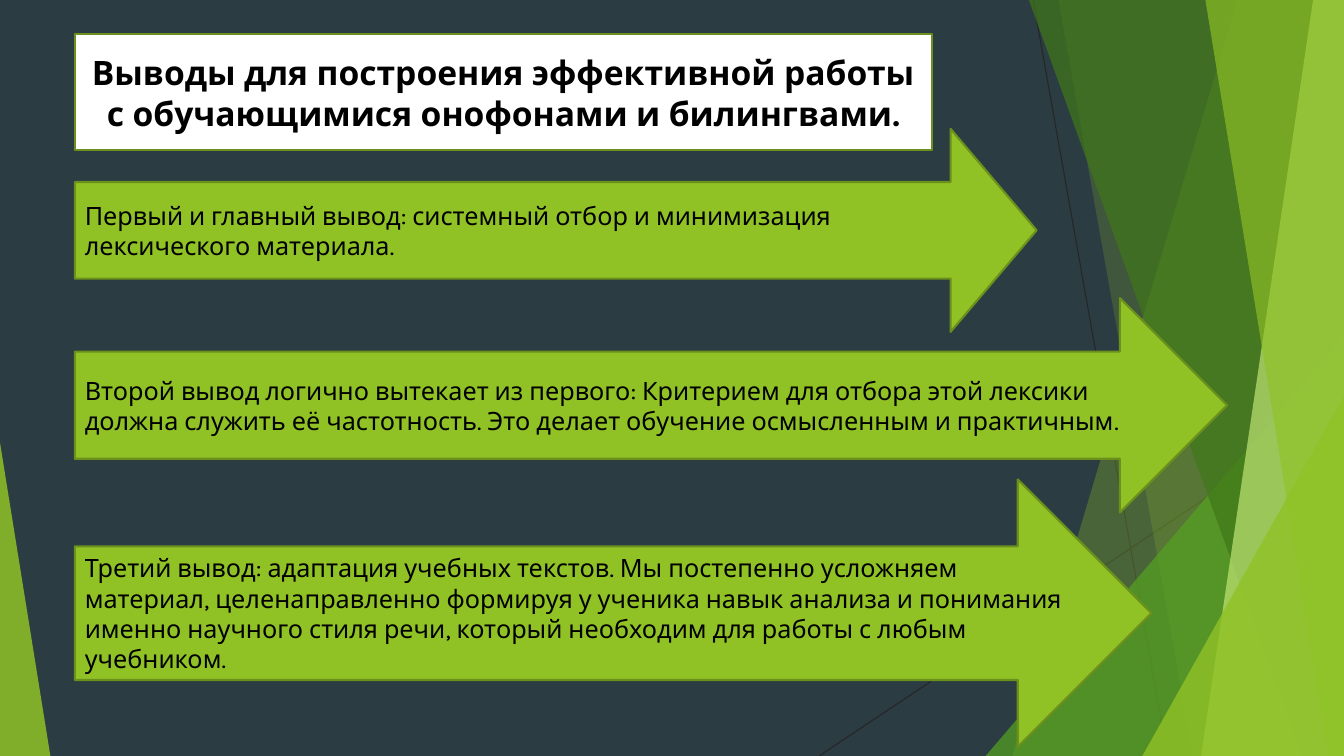
from lxml import etree
from pptx import Presentation
from pptx.dml.color import RGBColor
from pptx.enum import shapes as shp, text as txt
from pptx.oxml import parse_xml
from pptx.oxml.ns import nsdecls, qn
from pptx.util import Pt

WIDTH, HEIGHT = 960, 540
FONT = "Karla"
GREEN, OUTLINE, BLACK = "90C226", "6B901C", "000000"
MARGIN = 53.5

# colour, opacity in percent, corners
FACETS = [
    (GREEN, 30, [(884, 0), (WIDTH, 0), (WIDTH, HEIGHT), (723, HEIGHT)]),
    (GREEN, 20, [(756, 0), (WIDTH, 0), (WIDTH, HEIGHT), (852, HEIGHT)]),
    ("54A021", 72, [(703.5, HEIGHT), (WIDTH, 240), (WIDTH, HEIGHT)]),
    ("3F7819", 70, [(735, 0), (WIDTH, 0), (WIDTH, HEIGHT), (930, HEIGHT)]),
    ("C0E474", 70, [(938, 0), (WIDTH, 0), (WIDTH, HEIGHT), (858, HEIGHT)]),
    (GREEN, 65, [(861, 0), (WIDTH, 0), (WIDTH, HEIGHT), (949, HEIGHT)]),
    (GREEN, 80, [(816.5, HEIGHT), (WIDTH, 283), (WIDTH, HEIGHT)]),
    (GREEN, 85, [(0, 316), (35.5, HEIGHT), (0, HEIGHT)]),
]
RAYS = [(738, 0, 834, HEIGHT), (WIDTH, 290, 585, HEIGHT)]

TITLE = "Выводы для построения эффективной работы с обучающимися онофонами и билингвами."
# top, width, height, (shaft share, head share), wording; from back to front
CONCLUSIONS = [
    (92, 687, 145, (0.476, 0.424),
     "Первый и главный вывод: системный отбор и минимизация лексического материала."),
    (342.5, 769, 191, (0.5, 0.5),
     "Третий вывод: адаптация учебных текстов. Мы постепенно усложняем материал, "
     "целенаправленно формируя у ученика навык анализа и понимания именно научного "
     "стиля речи, который необходим для работы с любым учебником."),
    (213, 823, 153, (0.5, 0.5),
     "Второй вывод логично вытекает из первого: Критерием для отбора этой лексики "
     "должна служить её частотность. Это делает обучение осмысленным и практичным."),
]


def rgb(code):
    return RGBColor.from_string(code)


def paint(shape, fill):
    shape.fill.solid()
    shape.fill.fore_color.rgb = rgb(fill)
    shape.line.color.rgb = rgb(OUTLINE)
    shape.line.width = Pt(1.5)


def write(shape, wording, size, alignment, bold=False):
    frame = shape.text_frame
    frame.text = wording
    frame.word_wrap = True
    frame.auto_size = txt.MSO_AUTO_SIZE.NONE
    frame.vertical_anchor = txt.MSO_ANCHOR.MIDDLE
    paragraph = frame.paragraphs[0]
    paragraph.alignment = alignment
    paragraph.font.name = FONT
    paragraph.font.size = Pt(size)
    paragraph.font.bold = bold
    paragraph.font.color.rgb = rgb(BLACK)


def add_ray(slide, x1, y1, x2, y2):
    ray = slide.shapes.add_connector(
        shp.MSO_CONNECTOR.STRAIGHT, Pt(x1), Pt(y1), Pt(x2), Pt(y2))
    ray.line.color.rgb = rgb("262626")
    ray.line.width = Pt(0.75)
    etree.SubElement(ray._element.spPr, qn("a:effectLst"))


def add_facet(slide, colour, opacity, corners):
    outline = slide.shapes.build_freeform(*corners[0], scale=Pt(1))
    outline.add_line_segments(corners[1:], close=True)
    facet = outline.convert_to_shape()
    facet.shadow.inherit = False
    facet.line.fill.background()
    facet.fill.solid()
    facet.fill.fore_color.rgb = rgb(colour)
    tint = facet._element.spPr.find(".//" + qn("a:srgbClr"))
    etree.SubElement(tint, qn("a:alpha"), val=str(opacity * 1000))


def add_backdrop(slide):
    slide.background.fill.solid()
    slide.background.fill.fore_color.rgb = rgb("2C3C43")
    for ray in RAYS:
        add_ray(slide, *ray)
    for facet in FACETS:
        add_facet(slide, *facet)


def place_title(slide, left, top, width, height):
    """Turn the title placeholder into a white rounded plate."""
    title = slide.shapes.title
    title.left, title.top = Pt(left), Pt(top)
    title.width, title.height = Pt(width), Pt(height)
    title._element.spPr.append(parse_xml(
        f'<a:prstGeom {nsdecls("a")} prst="roundRect"><a:avLst/></a:prstGeom>'))
    paint(title, "FFFFFF")
    write(title, TITLE, 24, txt.PP_ALIGN.CENTER, bold=True)


def add_conclusion(slide, left, top, width, height, proportions, wording):
    arrow = slide.shapes.add_shape(
        shp.MSO_SHAPE.RIGHT_ARROW, Pt(left), Pt(top), Pt(width), Pt(height))
    arrow.shadow.inherit = False
    arrow.adjustments[0], arrow.adjustments[1] = proportions
    paint(arrow, GREEN)
    write(arrow, wording, 18, txt.PP_ALIGN.LEFT)


def main():
    deck = Presentation()
    deck.slide_width, deck.slide_height = Pt(WIDTH), Pt(HEIGHT)
    slide = deck.slides.add_slide(deck.slide_layouts.get_by_name("Title Only"))
    add_backdrop(slide)
    place_title(slide, MARGIN, 24.5, 612, 83)
    for conclusion in CONCLUSIONS:
        add_conclusion(slide, MARGIN, *conclusion)
    deck.save("out.pptx")


if __name__ == "__main__":
    main()
